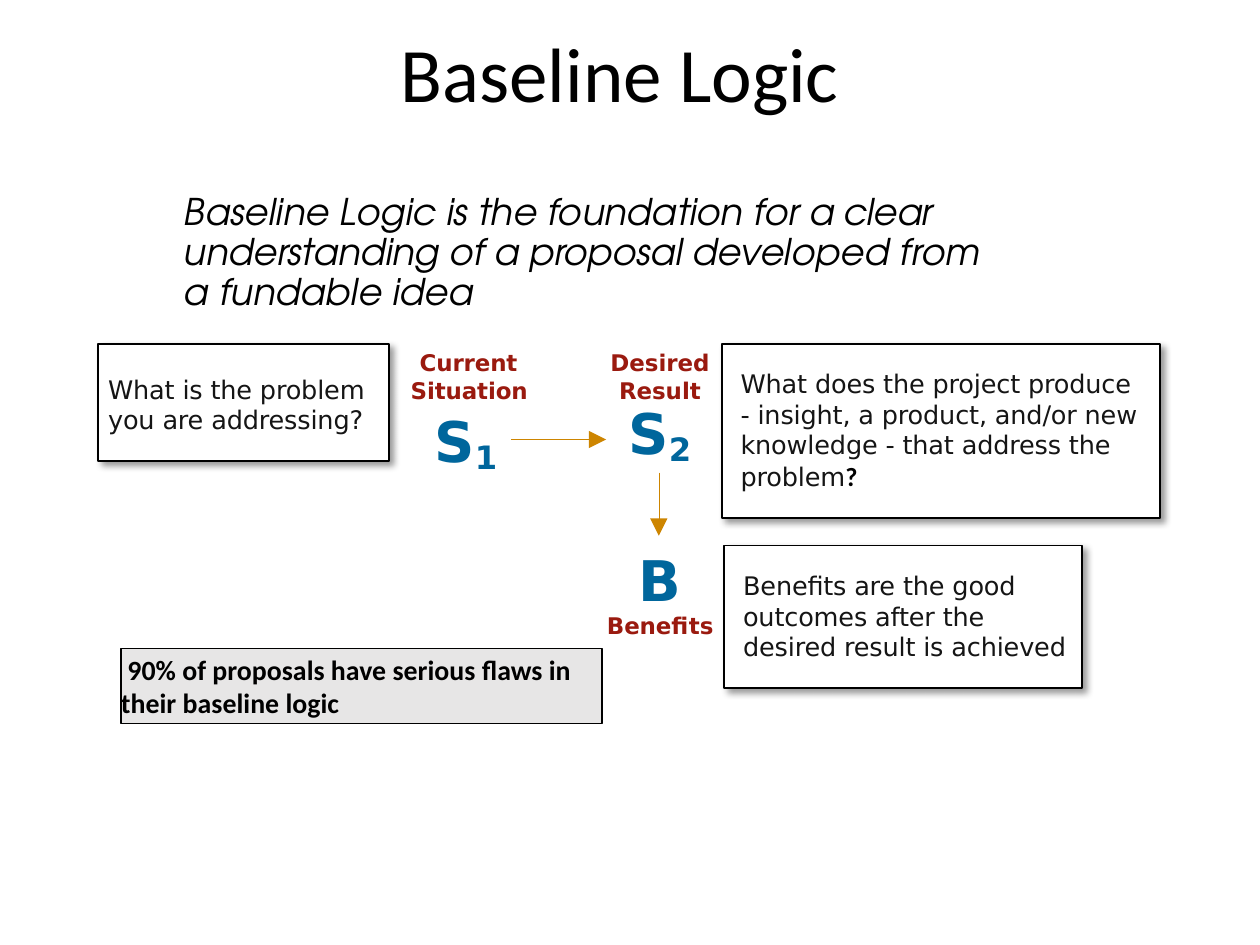
from lxml.etree import SubElement
from pptx import Presentation
from pptx.dml.color import RGBColor
from pptx.enum.shapes import MSO_CONNECTOR, MSO_SHAPE
from pptx.enum.text import MSO_ANCHOR, PP_ALIGN
from pptx.oxml.ns import qn
from pptx.util import Cm, Pt

BLACK = RGBColor(0x00, 0x00, 0x00)
WHITE = RGBColor(0xFF, 0xFF, 0xFF)
GREY = RGBColor(0xE7, 0xE6, 0xE6)
INK = RGBColor(0x15, 0x15, 0x15)
BLUE = RGBColor(0x00, 0x66, 0x9C)
RED = RGBColor(0x9A, 0x1A, 0x0F)
GOLD = RGBColor(0xCD, 0x85, 0x00)

SANS = "DejaVu Sans"
PLAIN = "Calibri"
LEAD = "TeX Gyre Adventor"


class Sketch:
    """Holds the style and the current slide."""

    def __init__(self, slide):
        self.slide = slide
        self.shapes = slide.shapes

    def frame(self, shape, pad=(0, 0, 0, 0), anchor=MSO_ANCHOR.TOP):
        text = shape.text_frame
        text.word_wrap = True
        text.vertical_anchor = anchor
        (text.margin_left, text.margin_top,
         text.margin_right, text.margin_bottom) = map(Cm, pad)
        return text

    def text(self, area, pad=(0, 0, 0, 0)):
        return self.frame(self.shapes.add_textbox(*map(Cm, area)), pad)

    def para(self, text, align=PP_ALIGN.LEFT, space=None, indent=0):
        first = text.paragraphs[0]
        line = text.add_paragraph() if first.runs else first
        line.alignment = align
        line.line_spacing = space
        if indent:
            line._p.get_or_add_pPr().set("indent", str(Cm(indent)))
        return line

    def run(self, line, words, size, color, font=SANS, bold=False,
            slant=False, track=0, base=0):
        for row, part in enumerate(words.split("\n")):
            if row:
                line.add_line_break()
            run = line.add_run()
            run.text = part
            style = run.font
            style.name, style.size = font, Pt(size)
            style.bold, style.italic = bold, slant
            style.color.rgb = color
            props = run._r.get_or_add_rPr()
            if track:
                props.set("spc", str(round(track * 100)))
            if base:
                props.set("baseline", str(base * 1000))

    def state(self, line, digit):
        """A state symbol: S with a lowered digit."""
        self.run(line, "S", 32, BLUE, bold=True)
        self.run(line, digit, 31.7, BLUE, bold=True, track=0.2, base=-13)

    def label(self, line, words, track=0):
        self.run(line, words, 13.1, RED, bold=True, track=track)

    def rect(self, area, fill, width):
        box = self.shapes.add_shape(MSO_SHAPE.RECTANGLE, *map(Cm, area))
        box.shadow.inherit = False
        box.fill.solid()
        box.fill.fore_color.rgb = fill
        box.line.color.rgb = BLACK
        box.line.width = Pt(width)
        return box

    def note(self, area, words, left, top):
        """A white box with a soft shadow; returns its paragraph."""
        box = self.rect(area, WHITE, 1)
        glow = SubElement(
            box._element.spPr.find(qn("a:effectLst")), qn("a:outerShdw"),
            blurRad=str(Pt(4)), dist=str(Pt(3)), dir="2700000",
            algn="tl", rotWithShape="0")
        tint = SubElement(glow, qn("a:srgbClr"), val=str(BLACK))
        SubElement(tint, qn("a:alpha"), val="40000")
        line = self.para(self.frame(box, (left, top, 0, 0)))
        self.run(line, words, 14.6, INK, track=-0.1)
        return line

    def arrow(self, *ends):
        link = self.shapes.add_connector(
            MSO_CONNECTOR.STRAIGHT, *map(Cm, ends))
        link.line.color.rgb = GOLD
        link.line.width = Pt(0.25)
        SubElement(link.line._get_or_add_ln(), qn("a:tailEnd"),
                   type="triangle", w="lg", len="lg")
        SubElement(link._element.spPr, qn("a:effectLst"))


def main():
    deck = Presentation()
    deck.slide_width, deck.slide_height = Cm(25.4), Cm(19.05)
    art = Sketch(deck.slides.add_slide(deck.slide_layouts[6]))
    mid = PP_ALIGN.CENTER

    # Title
    text = art.text((-0.2, 0.13, 25.4, 2.64), (0.25, 0.38, 0.25, 0.38))
    art.run(art.para(text, mid), "Baseline Logic", 44, BLACK, PLAIN)

    # Lead sentence
    text = art.text((3.43, 3.78, 17.22, 1.88), (0.28, 0.13, 0.25, 0.13))
    line = art.para(text, space=0.9)
    for words, track in (("Baseline Logic is the foundation for ", 0),
                         ("a clear ", -0.3),
                         ("understanding of a proposal ", -0.1),
                         ("developed from a fundable idea", 0)):
        art.run(line, words, 21, BLACK, LEAD, slant=True, track=track)

    # Current situation
    text = art.text((8.28, 7.01, 2.41, 1.14))
    art.label(art.para(text, space=1.02, indent=0.18),
              "Current Situation", -0.05)
    art.state(art.para(art.text((8.76, 8.2, 1.4, 1.37))), "1")

    # Desired result
    text = art.text((12.29, 7.01, 2.03, 2.46))
    art.label(art.para(text, mid, 1.02), "Desired Result")
    art.state(art.para(text, mid, Pt(36.5)), "2")

    # Benefits
    text = art.text((12.22, 11, 2.18, 1.88))
    art.run(art.para(text, mid, Pt(38.1)), "B", 32, BLUE, bold=True)
    art.label(art.para(text, mid, Pt(15.4)), "Benefits", -0.05)

    # Arrows between the states
    art.arrow(10.31, 8.86, 12.22, 8.86)
    art.arrow(13.28, 9.53, 13.28, 10.8)

    # Explanations
    art.note((1.98, 6.93, 5.87, 2.36),
             "What is the problem you are addressing?", 0.2, 0.6)
    line = art.note(
        (14.55, 6.93, 8.84, 3.51),
        "What does the project produce\n- insight, a product, and/or new\n"
        "knowledge - that address the\nproblem", 0.38, 0.49)
    art.run(line, "?", 15, BLACK, PLAIN, bold=True)
    art.note((14.6, 11, 7.21, 2.87),
             "Benefits are the good outcomes after the desired result "
             "is achieved", 0.38, 0.49)

    # Warning
    box = art.rect((2.44, 13.08, 9.7, 1.5), GREY, 0.75)
    text = art.frame(box, anchor=MSO_ANCHOR.MIDDLE)
    art.run(art.para(text, indent=0.13),
            "90% of proposals have serious flaws in\n"
            "their baseline logic", 15.9, BLACK, PLAIN, bold=True)

    deck.save("out.pptx")


if __name__ == "__main__":
    main()
